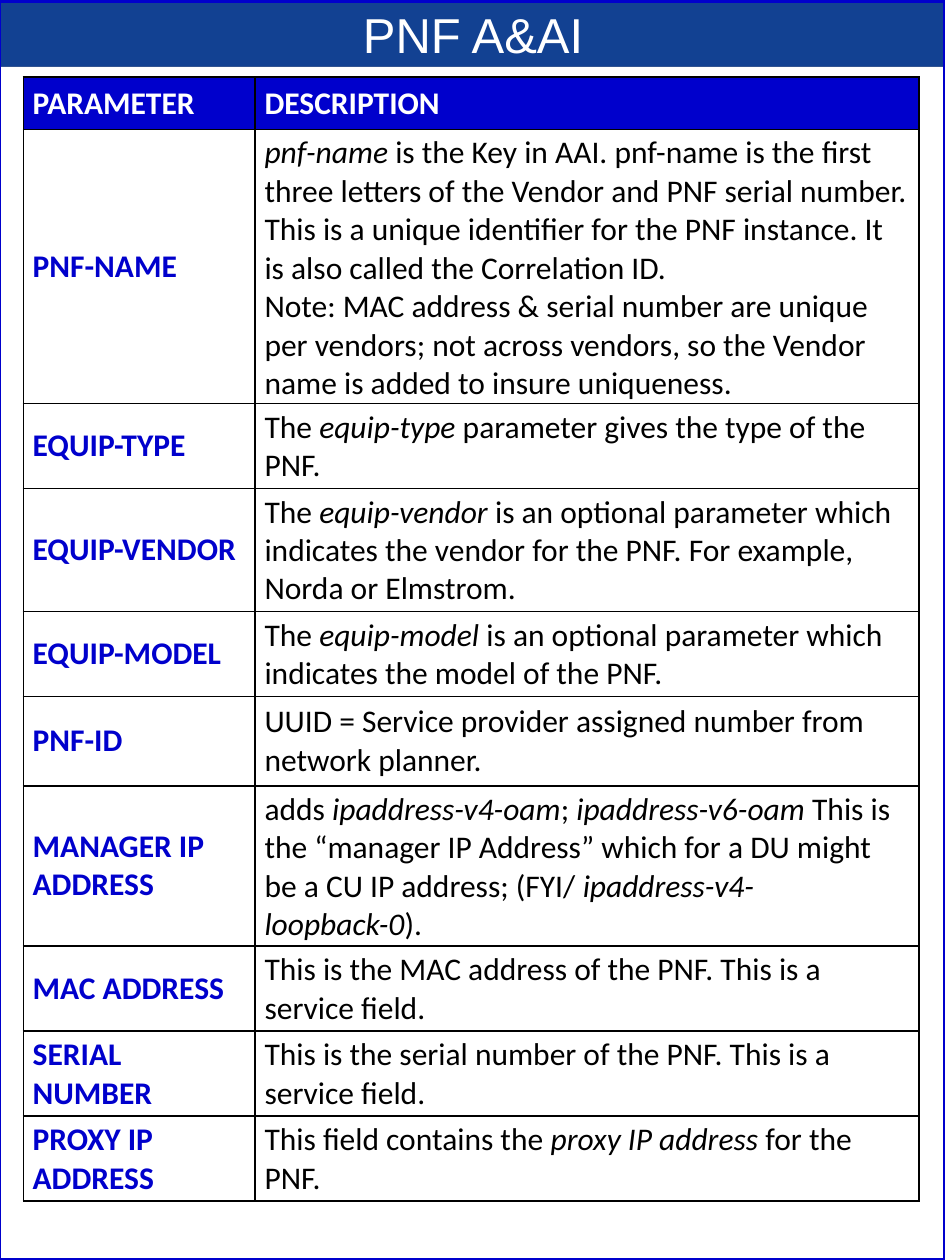
from dataclasses import dataclass

from lxml.etree import SubElement
from pptx import Presentation
from pptx.dml.color import RGBColor
from pptx.enum.shapes import MSO_SHAPE
from pptx.enum.text import MSO_ANCHOR, PP_ALIGN
from pptx.oxml.ns import qn
from pptx.util import Pt


@dataclass(frozen=True)
class Theme:
    white: str = "FFFFFF"
    black: str = "000000"
    blue: str = "0000CC"
    band: str = "124192"
    edge: str = "325491"
    head: int = 28
    body: int = 18


theme = Theme()


def write(para, text, color, **more):
    """Add runs to a paragraph; text between asterisks is italic."""
    for i, part in enumerate(text.split("*")):
        if part:
            run = para.add_run()
            run.text = part
            form = {"name": "Calibri", "size": Pt(theme.body),
                    "bold": False, "italic": i % 2 == 1} | more
            for key, value in form.items():
                setattr(run.font, key, value)
            run.font.color.rgb = RGBColor.from_string(color)


def rule(cell):
    """Draw a thin line on all four sides of a cell."""
    props = cell._tc.get_or_add_tcPr()
    for i, side in enumerate(("lnL", "lnR", "lnT", "lnB")):
        line = props.makeelement(qn(f"a:{side}"), {"w": str(Pt(1))})
        props.insert(i, line)
        fill = SubElement(line, qn("a:solidFill"))
        SubElement(fill, qn("a:srgbClr"), val=theme.black)


deck = Presentation()
deck.slide_width, deck.slide_height = Pt(540), Pt(720)
slide = deck.slides.add_slide(deck.slide_layouts[6])

# Title band and page frame
group = slide.shapes.add_group_shape()
band = group.shapes.add_shape(MSO_SHAPE.RECTANGLE, Pt(0), Pt(0.7), Pt(540), Pt(37.4))
band.fill.solid()
band.fill.fore_color.rgb = RGBColor.from_string(theme.band)

title = group.shapes.add_textbox(Pt(172.8), Pt(-0.7), Pt(195), Pt(41))
title.text_frame.word_wrap = False
para = title.text_frame.paragraphs[0]
para.alignment = PP_ALIGN.CENTER
write(para, "PNF A&AI", theme.white, name="Arial", size=Pt(theme.head))

frame = group.shapes.add_shape(MSO_SHAPE.RECTANGLE, Pt(-0.7), Pt(0.7), Pt(540.7), Pt(719.3))
frame.fill.background()

for box, color, width in ((band, theme.edge, 1), (frame, theme.blue, 2.25)):
    box.shadow.inherit = False
    box.line.color.rgb = RGBColor.from_string(color)
    box.line.width = Pt(width)

# Row height, parameter, description paragraphs
rows = [
    (30, "PARAMETER", ["DESCRIPTION"]),
    (156.6, "PNF-NAME", [
        "*pnf-name *is the Key in AAI. pnf-name is the first three letters of the "
        "Vendor and PNF serial number. This is a unique identifier for the PNF "
        "instance. It is also called the Correlation ID.",
        "Note: MAC address & serial number are unique per vendors; not across "
        "vendors, so the Vendor name is added to insure uniqueness."]),
    (48.6, "EQUIP-TYPE", ["The *equip-type* parameter gives the type of the PNF."]),
    (70.3, "EQUIP-VENDOR", [
        "The *equip-vendor *is an optional parameter which indicates the vendor "
        "for the PNF. For example, Norda or Elmstrom."]),
    (48.6, "EQUIP-MODEL", [
        "The *equip-model *is an optional parameter which indicates the model of the PNF."]),
    (51, "PNF-ID", ["UUID = Service provider assigned number from network planner."]),
    (91.4, "MANAGER IP ADDRESS", [
        "adds *ipaddress-v4-oam*; *ipaddress-v6-oam *This is the “manager IP "
        "Address” which for a DU might be a CU IP address; (FYI/ "
        "*ipaddress-v4-loopback-0*)."]),
    (48.6, "MAC ADDRESS", ["This is the MAC address of the PNF. This is a service field."]),
    (48.6, "SERIAL NUMBER", [
        "This is the serial number of the PNF. This is a service field."]),
    (48.6, "PROXY IP ADDRESS", [
        "This field contains the *proxy IP address *for the PNF."]),
]
high = sum(row[0] for row in rows)
table = slide.shapes.add_table(len(rows), 2, Pt(13.3), Pt(44), Pt(512), Pt(high)).table
for col, width in zip(table.columns, (132.5, 379.5)):
    col.width = Pt(width)

pad = {"margin_left": Pt(5.4), "margin_right": Pt(5.4), "margin_top": Pt(2.6),
       "margin_bottom": Pt(2.6), "vertical_anchor": MSO_ANCHOR.MIDDLE}
for r, (height, name, notes) in enumerate(rows):
    table.rows[r].height = Pt(height)
    for c, texts in enumerate(([name], notes)):
        cell = table.cell(r, c)
        for key, value in pad.items():
            setattr(cell, key, value)
        if r == 0:
            cell.fill.solid()
            cell.fill.fore_color.rgb = RGBColor.from_string(theme.blue)
            color = theme.white
        else:
            cell.fill.background()
            color = theme.black if c else theme.blue
        rule(cell)
        for i, text in enumerate(texts):
            body = cell.text_frame
            para = body.add_paragraph() if i else body.paragraphs[0]
            write(para, text, color, bold=r == 0 or c == 0)

deck.save("out.pptx")
